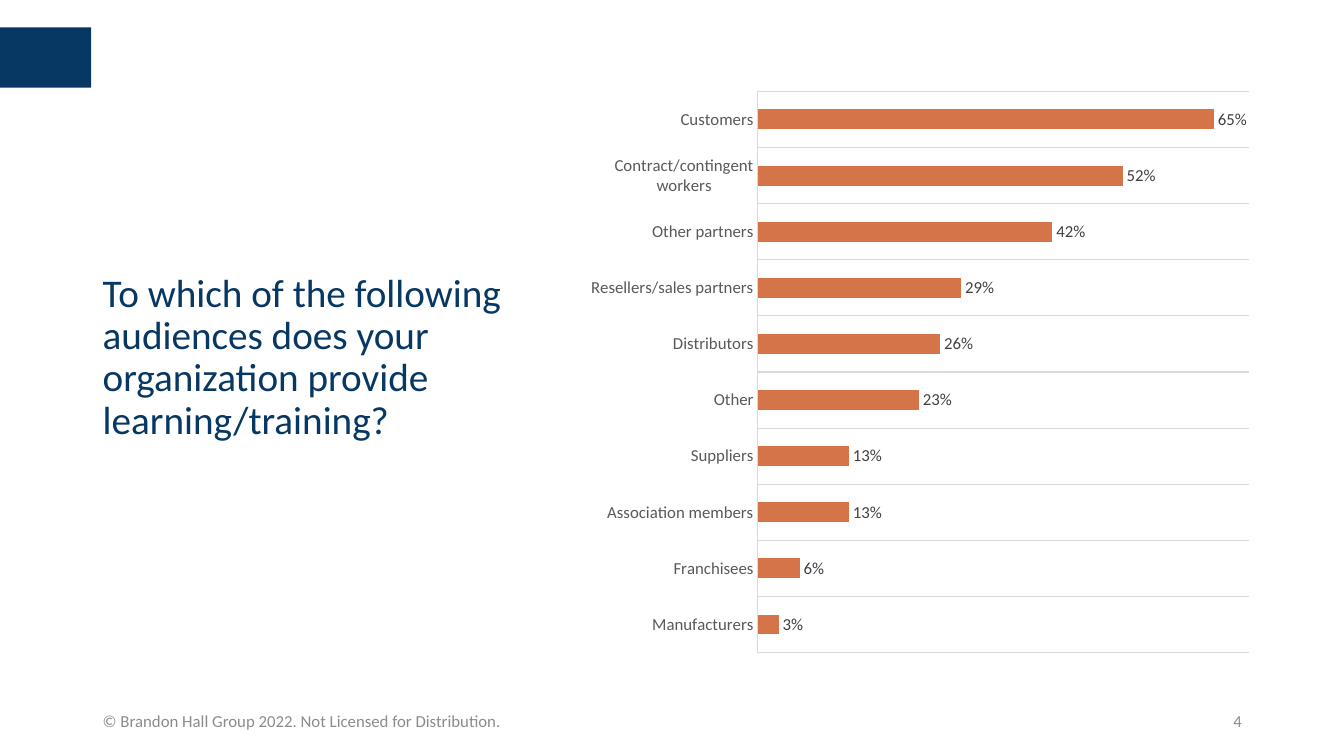
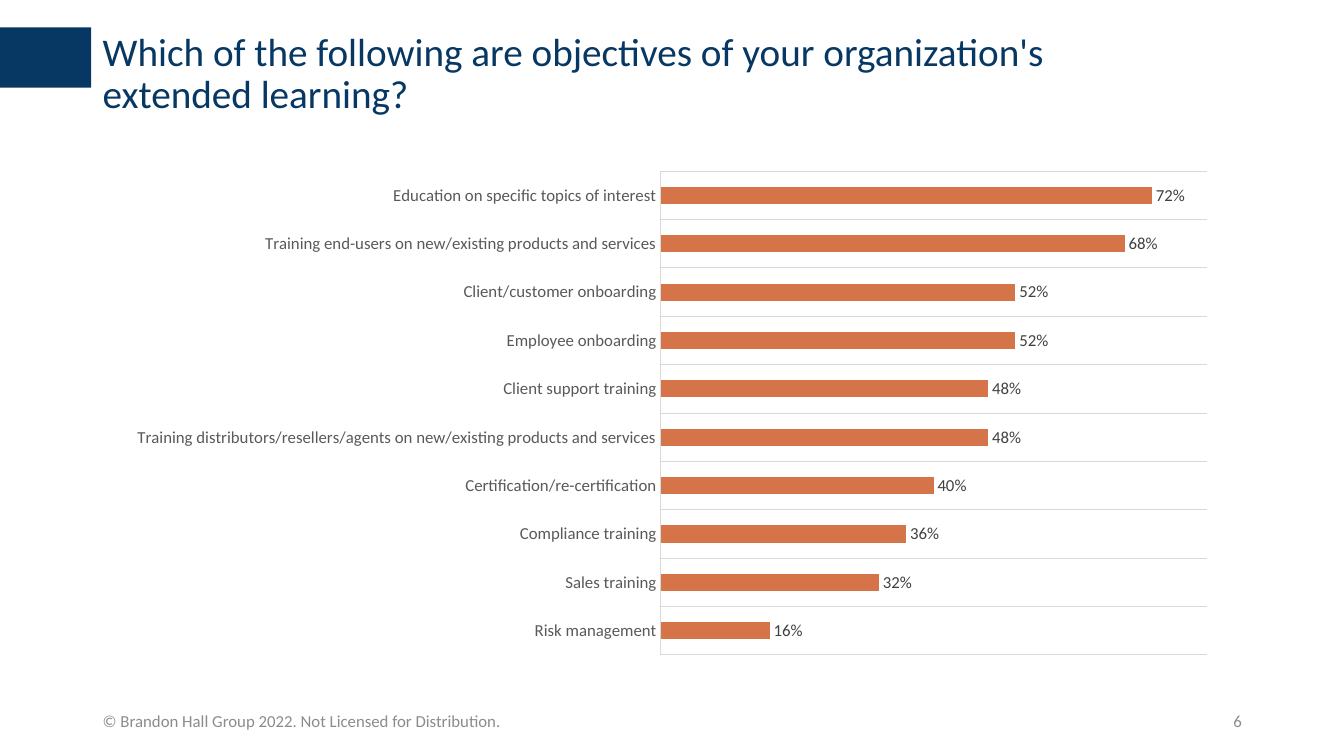
from pptx import Presentation
from pptx.chart.data import CategoryChartData
from pptx.dml.color import RGBColor
from pptx.enum import chart as ch, shapes, text
from pptx.util import Cm, Pt

NAVY = RGBColor(0x07, 0x37, 0x63)
ORANGE = RGBColor(0xD5, 0x73, 0x49)
FOOTER_GRAY = RGBColor(0x8C, 0x8C, 0x8C)
AXIS_GRAY = RGBColor(0x59, 0x59, 0x59)
LABEL_GRAY = RGBColor(0x40, 0x40, 0x40)
RULE_GRAY = RGBColor(0xD9, 0xD9, 0xD9)
FONT = "Calibri"
COPYRIGHT = "© Brandon Hall Group 2022. Not Licensed for Distribution."
MARGIN = 2.34

surveys = [
    {
        "number": "4",
        "question": "To which of the following audiences does your organization provide learning/training?",
        "question_box": (MARGIN, 6.76, 10.54, 4.75),
        "chart_box": (14.55, 2.01, 17.27, 14.73),
        "answers": [
            ("Customers", 0.65),
            ("Contract/contingent workers", 0.52),
            ("Other partners", 0.42),
            ("Resellers/sales partners", 0.29),
            ("Distributors", 0.26),
            ("Other", 0.23),
            ("Suppliers", 0.13),
            ("Association members", 0.13),
            ("Franchisees", 0.06),
            ("Manufacturers", 0.03),
        ],
    },
    {
        "number": "6",
        "question": "Which of the following are objectives of your organization's extended learning?",
        "question_box": (MARGIN, 0.69, 26.09, 2.92),
        "chart_box": (2.9, 4.06, 28.07, 12.7),
        "answers": [
            ("Education on specific topics of interest", 0.72),
            ("Training end-users on new/existing products and services", 0.68),
            ("Client/customer onboarding", 0.52),
            ("Employee onboarding", 0.52),
            ("Client support training", 0.48),
            ("Training distributors/resellers/agents on new/existing products and services", 0.48),
            ("Certification/re-certification", 0.4),
            ("Compliance training", 0.36),
            ("Sales training", 0.32),
            ("Risk management", 0.16),
        ],
    },
]


def style_font(font, size, color):
    font.name = FONT
    font.size = Pt(size)
    font.color.rgb = color


def add_text(slide, box, wording, size, color, anchor, align=text.PP_ALIGN.LEFT):
    frame = slide.shapes.add_textbox(*map(Cm, box)).text_frame
    frame.word_wrap = True
    frame.vertical_anchor = anchor
    paragraph = frame.paragraphs[0]
    paragraph.text = wording
    paragraph.alignment = align
    style_font(paragraph.font, size, color)
    return paragraph


deck = Presentation()
deck.slide_width = Cm(33.87)
deck.slide_height = Cm(19.05)

for survey in surveys:
    slide = deck.slides.add_slide(deck.slide_layouts[6])

    accent = slide.shapes.add_shape(
        shapes.MSO_SHAPE.RECTANGLE, Cm(0), Cm(0.69), Cm(2.3), Cm(1.52))
    accent.shadow.inherit = False
    accent.fill.solid()
    accent.fill.fore_color.rgb = NAVY
    accent.line.fill.background()

    add_text(slide, (MARGIN, 17.65, 11.43, 1.02), COPYRIGHT, 12, FOOTER_GRAY,
             text.MSO_ANCHOR.MIDDLE)
    add_text(slide, (23.93, 17.65, 7.62, 1.02), survey["number"], 12, FOOTER_GRAY,
             text.MSO_ANCHOR.MIDDLE, text.PP_ALIGN.RIGHT)
    question = add_text(slide, survey["question_box"], survey["question"], 28, NAVY,
                        text.MSO_ANCHOR.TOP)
    question.line_spacing = 0.9

    responses = CategoryChartData(number_format="0%")
    names, shares = zip(*reversed(survey["answers"]))
    responses.categories = names
    responses.add_series("Series 1", shares)
    chart = slide.shapes.add_chart(
        ch.XL_CHART_TYPE.BAR_CLUSTERED, *map(Cm, survey["chart_box"]), responses).chart
    chart.has_legend = False
    chart.has_title = False
    chart.font.name = FONT
    chart.font.size = Pt(10)

    audience_axis = chart.category_axis
    audience_axis.major_tick_mark = ch.XL_TICK_MARK.NONE
    audience_axis.minor_tick_mark = ch.XL_TICK_MARK.NONE
    audience_axis.has_major_gridlines = True
    style_font(audience_axis.tick_labels.font, 12, AXIS_GRAY)
    for rule in (audience_axis.format.line, audience_axis.major_gridlines.format.line):
        rule.color.rgb = RULE_GRAY
        rule.width = Pt(0.75)

    chart.value_axis.visible = False
    chart.value_axis.has_major_gridlines = False

    bars = chart.plots[0]
    bars.gap_width = 182
    bars.vary_by_categories = False
    bars.series[0].format.fill.solid()
    bars.series[0].format.fill.fore_color.rgb = ORANGE
    bars.has_data_labels = True
    labels = bars.data_labels
    labels.show_value = True
    labels.number_format = "0%"
    labels.number_format_is_linked = False
    labels.position = ch.XL_LABEL_POSITION.OUTSIDE_END
    style_font(labels.font, 12, LABEL_GRAY)

deck.save("out.pptx")
